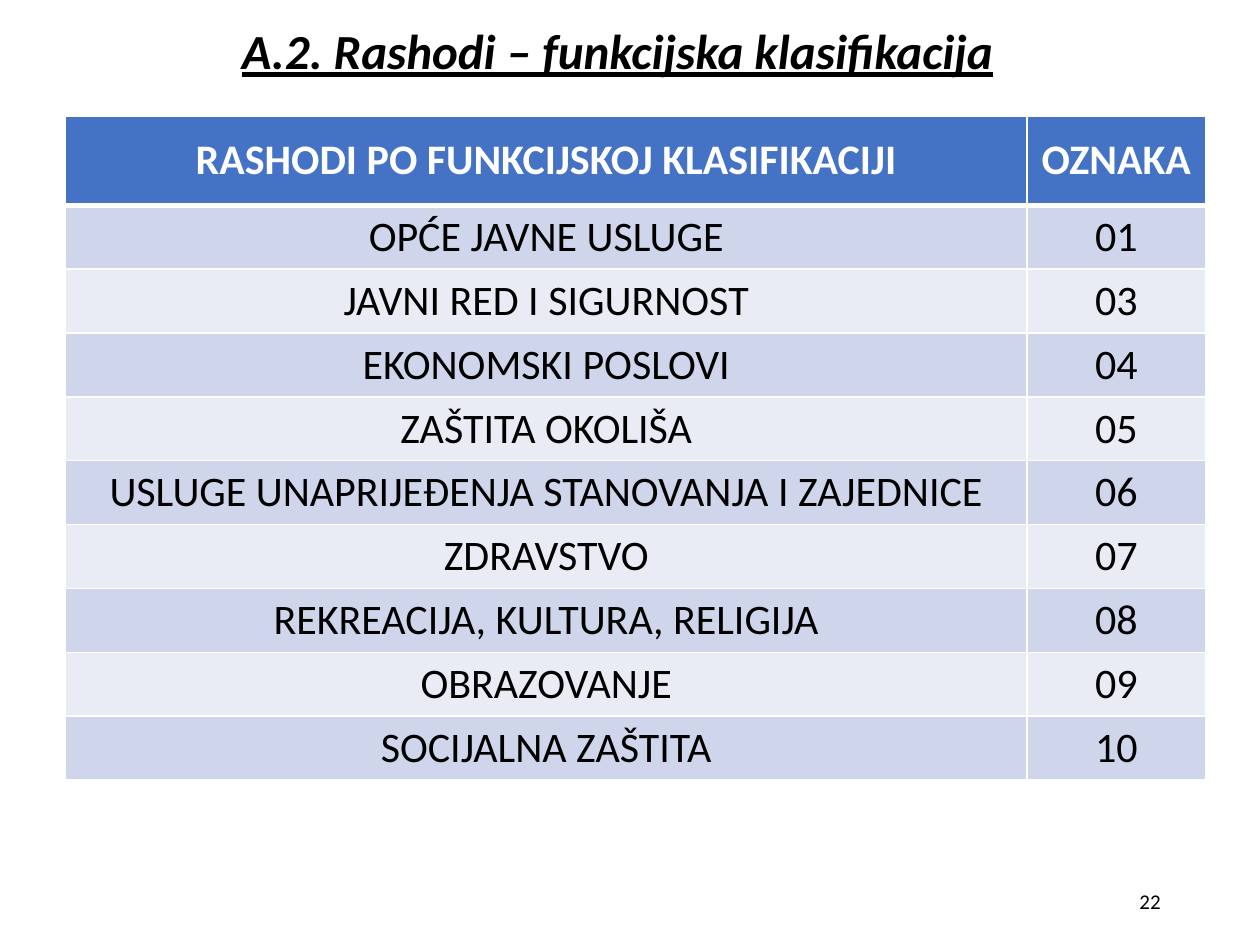
"""Build the slide on expenses by functional classification."""
from dataclasses import dataclass

from lxml.etree import SubElement
from pptx import Presentation
from pptx.dml.color import RGBColor
from pptx.enum.text import MSO_ANCHOR, PP_ALIGN
from pptx.oxml.ns import qn
from pptx.util import Inches, Pt

BLACK = RGBColor(0x00, 0x00, 0x00)
WHITE = RGBColor(0xFF, 0xFF, 0xFF)
BLUE = RGBColor(0x44, 0x72, 0xC4)
BANDS = (RGBColor(0xCF, 0xD5, 0xEA), RGBColor(0xE9, 0xEB, 0xF5))
FONT = "Calibri"
WIDTHS = (7.63, 1.42)
HEAD_H, ROW_H = 0.71, 0.507
HEAD = ("RASHODI PO FUNKCIJSKOJ KLASIFIKACIJI", "OZNAKA")
ROWS = (
    ("OPĆE JAVNE USLUGE", "01"),
    ("JAVNI RED I SIGURNOST", "03"),
    ("EKONOMSKI POSLOVI", "04"),
    ("ZAŠTITA OKOLIŠA", "05"),
    ("USLUGE UNAPRIJEĐENJA STANOVANJA I ZAJEDNICE", "06"),
    ("ZDRAVSTVO", "07"),
    ("REKREACIJA, KULTURA, RELIGIJA", "08"),
    ("OBRAZOVANJE", "09"),
    ("SOCIJALNA ZAŠTITA", "10"),
)


@dataclass(frozen=True)
class Style:
    """Look of a line of text."""
    size: int
    color: RGBColor = BLACK
    bold: bool = False
    fancy: bool = False
    align: PP_ALIGN = PP_ALIGN.CENTER


@dataclass(frozen=True)
class Label:
    """Text box with its place in inches."""
    text: str
    left: float
    top: float
    width: float
    height: float
    style: Style


LABELS = (
    Label("A.2. Rashodi – funkcijska klasifikacija", 0.5, 0.08, 8.8, 0.63,
          Style(28, bold=True, fancy=True)),
    Label("22", 7.06, 6.95, 2.25, 0.4, Style(12, align=PP_ALIGN.RIGHT)),
)


def write(frame, text: str, style: Style) -> None:
    """Put styled text in a frame."""
    frame.text = text
    line = frame.paragraphs[0]
    line.alignment = style.align
    font = line.runs[0].font
    font.name, font.size, font.bold = FONT, Pt(style.size), style.bold
    font.italic = font.underline = style.fancy
    font.color.rgb = style.color


def add_label(slide, label: Label) -> None:
    """Add one text box."""
    box = slide.shapes.add_textbox(
        Inches(label.left), Inches(label.top),
        Inches(label.width), Inches(label.height))
    frame = box.text_frame
    frame.word_wrap = True
    frame.vertical_anchor = MSO_ANCHOR.MIDDLE
    write(frame, label.text, label.style)


def add_edge(cell, side: str, width: float) -> None:
    """Draw one white border of a cell."""
    edge = SubElement(cell._tc.get_or_add_tcPr(), qn(f"a:ln{side}"), w=str(Pt(width)))
    fill = SubElement(edge, qn("a:solidFill"))
    SubElement(fill, qn("a:srgbClr"), val=str(WHITE))


def fill_cell(cell, text: str, row: int) -> None:
    """Style and fill one table cell."""
    head = row == 0
    cell.vertical_anchor = MSO_ANCHOR.MIDDLE
    write(cell.text_frame, text, Style(24, WHITE if head else BLACK, bold=head))
    for side in "LRTB":
        thick = (head and side == "B") or (row == 1 and side == "T")
        add_edge(cell, side, 3 if thick else 1)
    cell.fill.solid()
    cell.fill.fore_color.rgb = BLUE if head else BANDS[(row - 1) % 2]


def add_grid(slide) -> None:
    """Add the table of expense codes."""
    data = (HEAD, *ROWS)
    table = slide.shapes.add_table(
        len(data), len(HEAD), Inches(0.52), Inches(0.92),
        Inches(sum(WIDTHS)), Inches(HEAD_H + ROW_H * len(ROWS))).table
    for col, width in zip(table.columns, WIDTHS):
        col.width = Inches(width)
    for row, texts in enumerate(data):
        table.rows[row].height = Inches(ROW_H if row else HEAD_H)
        for col, text in enumerate(texts):
            fill_cell(table.cell(row, col), text, row)


def main() -> None:
    """Build and save the deck."""
    deck = Presentation()
    deck.slide_width, deck.slide_height = Inches(10), Inches(7.5)
    slide = deck.slides.add_slide(deck.slide_layouts[6])
    for label in LABELS:
        add_label(slide, label)
    add_grid(slide)
    deck.save("out.pptx")


if __name__ == "__main__":
    main()
